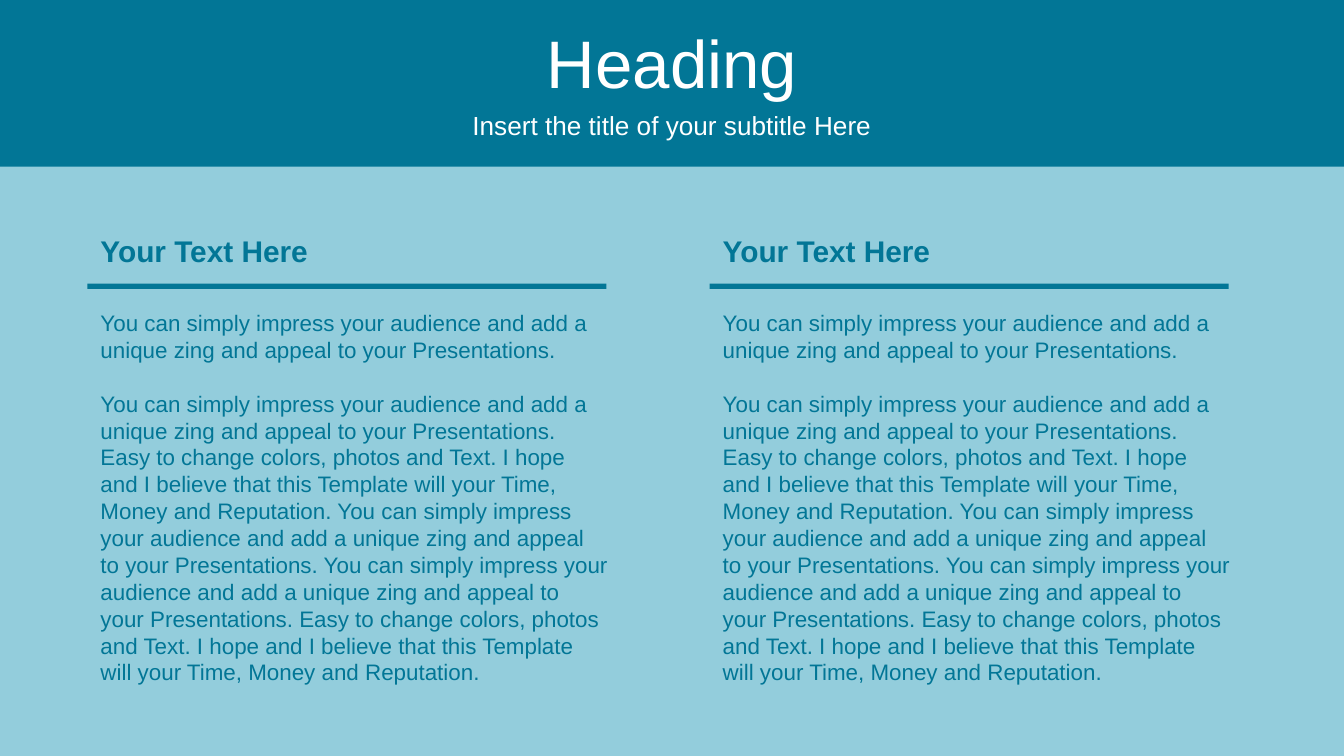
from lxml import etree
from pptx import Presentation
from pptx.dml.color import RGBColor
from pptx.enum.shapes import MSO_SHAPE
from pptx.enum.text import MSO_ANCHOR, PP_ALIGN
from pptx.oxml.ns import qn
from pptx.util import Cm, Pt

RECTANGLE = MSO_SHAPE.RECTANGLE
MIDDLE, TOP = MSO_ANCHOR.MIDDLE, MSO_ANCHOR.TOP
CENTER, LEFT = PP_ALIGN.CENTER, PP_ALIGN.LEFT

TEAL = RGBColor(0x02, 0x76, 0x96)
AQUA = RGBColor(0x4B, 0xAC, 0xC6)
WHITE = RGBColor(0xFF, 0xFF, 0xFF)

HEADING = {"size": Pt(36), "color": WHITE}
SUBTITLE = {"size": Pt(14), "color": WHITE}
COLUMN_TITLE = {"size": Pt(16), "bold": True, "color": TEAL}
BODY = {"size": Pt(12), "color": TEAL}

IMPRESS = ("You can simply impress your audience and add a unique zing "
           "and appeal to your Presentations.")
EASY = ("Easy to change colors, photos and Text. I hope and I believe that "
        "this Template will your Time, Money and Reputation.")
COLUMN_PARAGRAPHS = [IMPRESS, " ".join([IMPRESS, EASY, IMPRESS, IMPRESS, EASY])]
LINE_PITCH = Pt(14.4)

SLIDE_WIDTH, SLIDE_HEIGHT = Cm(25.4), Cm(14.29)


def add_panel(slide, left, top, width, height, color, opacity=100):
    panel = slide.shapes.add_shape(RECTANGLE, left, top, width, height)
    panel.shadow.inherit = False
    panel.fill.solid()
    panel.fill.fore_color.rgb = color
    panel.line.fill.background()
    if opacity < 100:
        color_element = panel.fill._xPr.find(".//" + qn("a:srgbClr"))
        etree.SubElement(color_element, qn("a:alpha"), val=str(opacity * 1000))


def add_text(slide, left, top, width, height, paragraphs, style,
             align=LEFT, anchor=TOP, spacing=None):
    """Place paragraphs in one style, with paragraph formats from spacing."""
    frame = slide.shapes.add_textbox(left, top, width, height).text_frame
    frame.word_wrap = True
    frame.vertical_anchor = anchor
    frame.text = "\n".join(paragraphs)
    for paragraph in frame.paragraphs:
        paragraph.alignment = align
        for name, value in (spacing or {}).items():
            setattr(paragraph, name, value)
        font = paragraph.runs[0].font
        font.name = "Arial"
        for name, value in style.items():
            if name == "color":
                font.color.rgb = value
            else:
                setattr(font, name, value)


def add_header(slide, left, top, width, height):
    add_panel(slide, left, top, width, height, TEAL)
    add_text(slide, left, top + Cm(0.36), width, Cm(1.6),
             ["Heading"], HEADING, CENTER, MIDDLE)
    add_text(slide, left, top + Cm(1.96), width, Cm(0.79),
             ["Insert the title of your subtitle Here"], SUBTITLE, CENTER, MIDDLE)


def add_column(slide, left, top, width):
    add_text(slide, left, top, width, Cm(0.94), ["Your Text Here"], COLUMN_TITLE)
    add_text(slide, left, top + Cm(1.45), width, Cm(7.44), COLUMN_PARAGRAPHS,
             BODY, spacing={"space_after": LINE_PITCH})
    add_panel(slide, left, top + Cm(1.09), width - Cm(0.3), Cm(0.1), TEAL)


def main():
    presentation = Presentation()
    presentation.slide_width = SLIDE_WIDTH
    presentation.slide_height = SLIDE_HEIGHT
    slide = presentation.slides.add_slide(presentation.slide_layouts[6])

    add_panel(slide, 0, 0, SLIDE_WIDTH, SLIDE_HEIGHT, AQUA, opacity=60)
    add_header(slide, 0, 0, SLIDE_WIDTH, Cm(3.15))
    for column_left in (Cm(1.65), Cm(13.41)):
        add_column(slide, column_left, Cm(4.27), Cm(10.11))

    presentation.save("out.pptx")


if __name__ == "__main__":
    main()
